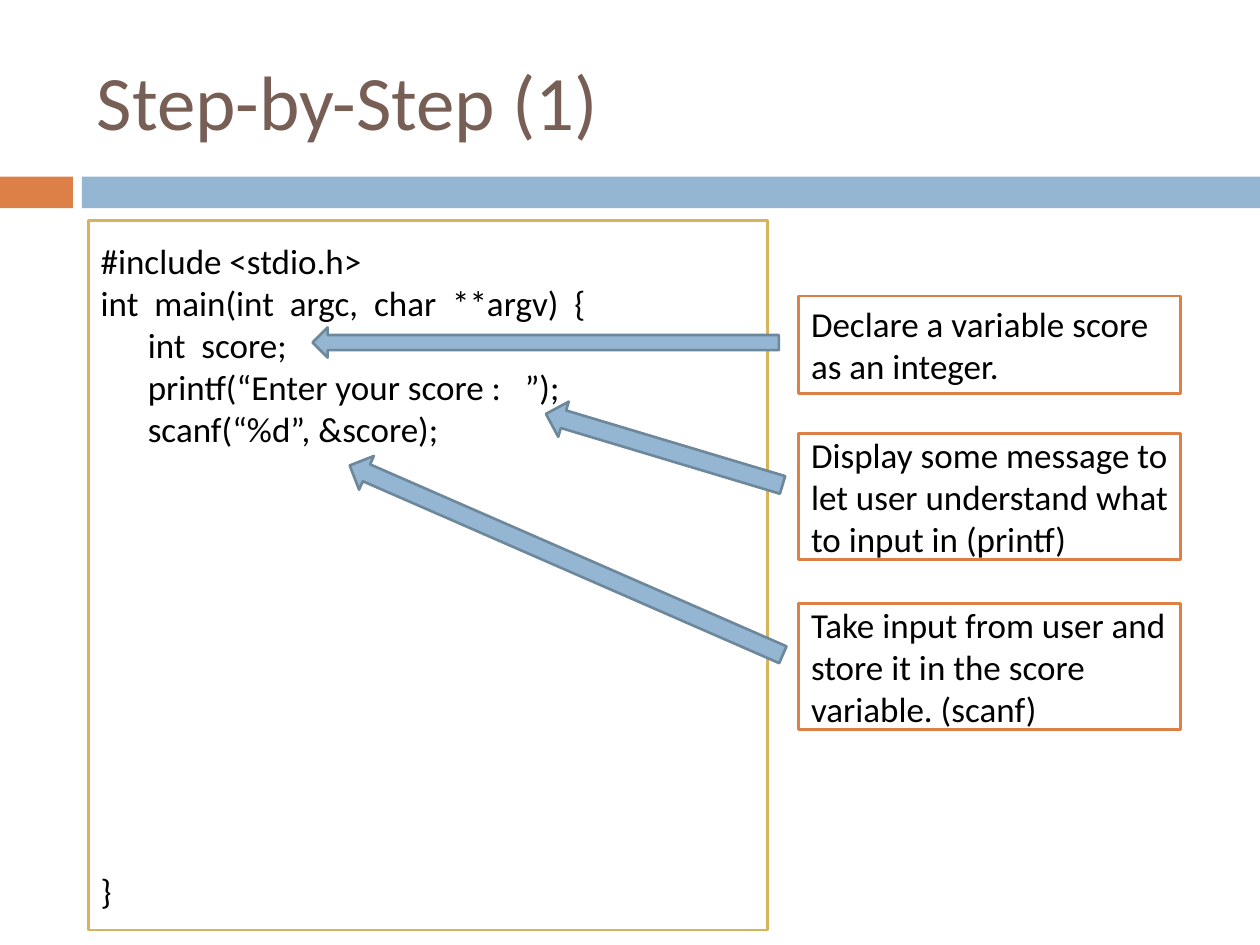
from typing import NamedTuple, Optional

from pptx import Presentation
from pptx.dml.color import RGBColor
from pptx.enum.shapes import MSO_SHAPE
from pptx.enum.text import MSO_ANCHOR, PP_ALIGN
from pptx.util import Cm, Pt

COLORS = {
    "title": "775F55",
    "orange": "DD8047",
    "blue": "94B6D2",
    "arrow_edge": "6D879B",
    "gold": "D8B25C",
    "white": "FFFFFF",
    "text": "000000",
}
FONT = "Calibri"
CODE_INDENT = Cm(0.95)
CLOSING_GAP = Pt(240)


class Box(NamedTuple):
    """Position and size in centimetres."""
    left: float
    top: float
    width: float
    height: float

    def lengths(self):
        return [Cm(value) for value in self]


class CodeLine(NamedTuple):
    text: str
    indented: bool = False
    space_before: int = 0


class Step(NamedTuple):
    """An explanation and the arrow from it to its code line."""
    note: str
    note_top: float
    note_height: float
    arrow: Box
    rotation: float


BARS = [
    (Box(0, 3.56, 1.47, 0.64), "orange"),
    (Box(1.65, 3.56, 23.75, 0.64), "blue"),
]
CODE = [
    CodeLine("#include <stdio.h>"),
    CodeLine("int  main(int  argc,  char  **argv)  {"),
    CodeLine("int  score;", indented=True),
    CodeLine("printf(“Enter your score :   ”);", indented=True),
    CodeLine("scanf(“%d”, &score);", indented=True),
    CodeLine("}", space_before=CLOSING_GAP),
]
STEPS = [
    Step("Declare a variable score as an integer.",
         5.97, 1.96, Box(6.3, 6.6, 9.4, 0.61), 180),
    Step("Display some message to let user understand what to input in (printf)",
         8.74, 2.54, Box(10.9, 8.69, 4.98, 0.74), 196.7),
    Step("Take input from user and store it in the score variable. (scanf)",
         12.17, 2.54, Box(6.65, 10.92, 9.53, 0.74), 203.6),
]


def color(name: str) -> RGBColor:
    return RGBColor.from_string(COLORS[name])


def add_figure(slide, kind, box: Box, fill: str, line: Optional[str] = None):
    figure = slide.shapes.add_shape(kind, *box.lengths())
    figure.shadow.inherit = False
    figure.fill.solid()
    figure.fill.fore_color.rgb = color(fill)
    if line:
        figure.line.color.rgb = color(line)
        figure.line.width = Pt(1.5)
    else:
        figure.line.fill.background()
    return figure


def write_lines(figure, lines: list[CodeLine], size: int = 20, ink: str = "text") -> None:
    frame = figure.text_frame
    frame.word_wrap = True
    frame.vertical_anchor = MSO_ANCHOR.MIDDLE
    for index, line in enumerate(lines):
        paragraph = frame.add_paragraph() if index else frame.paragraphs[0]
        paragraph.text = line.text
        paragraph.alignment = PP_ALIGN.LEFT
        paragraph.font.name = FONT
        paragraph.font.size = Pt(size)
        paragraph.font.color.rgb = color(ink)
        if line.indented:
            paragraph._p.get_or_add_pPr().set("marL", str(CODE_INDENT))
        if line.space_before:
            paragraph.space_before = line.space_before


def main() -> None:
    presentation = Presentation()
    presentation.slide_width = Cm(25.4)
    presentation.slide_height = Cm(19.05)
    slide = presentation.slides.add_slide(presentation.slide_layouts[6])

    for box, fill in BARS:
        add_figure(slide, MSO_SHAPE.RECTANGLE, box, fill)

    title = slide.shapes.add_textbox(*Box(1.7, 0.64, 22.65, 2.74).lengths())
    write_lines(title, [CodeLine("Step-by-Step (1)")], size=44, ink="title")

    program = add_figure(slide, MSO_SHAPE.RECTANGLE,
                         Box(1.78, 4.45, 13.69, 14.3), "white", "gold")
    write_lines(program, CODE)

    for step in STEPS:
        note = add_figure(slide, MSO_SHAPE.RECTANGLE,
                          Box(16.1, step.note_top, 7.7, step.note_height), "white", "orange")
        write_lines(note, [CodeLine(step.note)])
        arrow = add_figure(slide, MSO_SHAPE.RIGHT_ARROW, step.arrow, "blue", "arrow_edge")
        arrow.rotation = step.rotation

    presentation.save("out.pptx")


if __name__ == "__main__":
    main()
